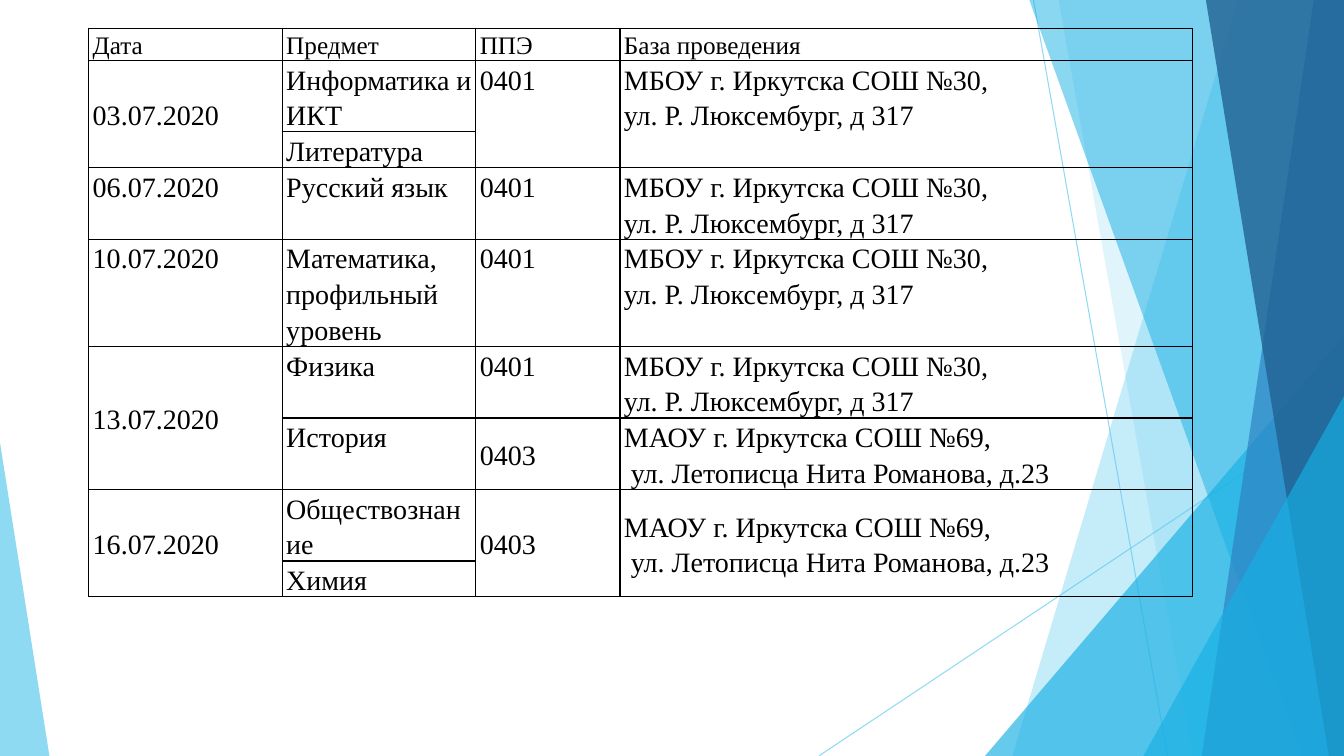
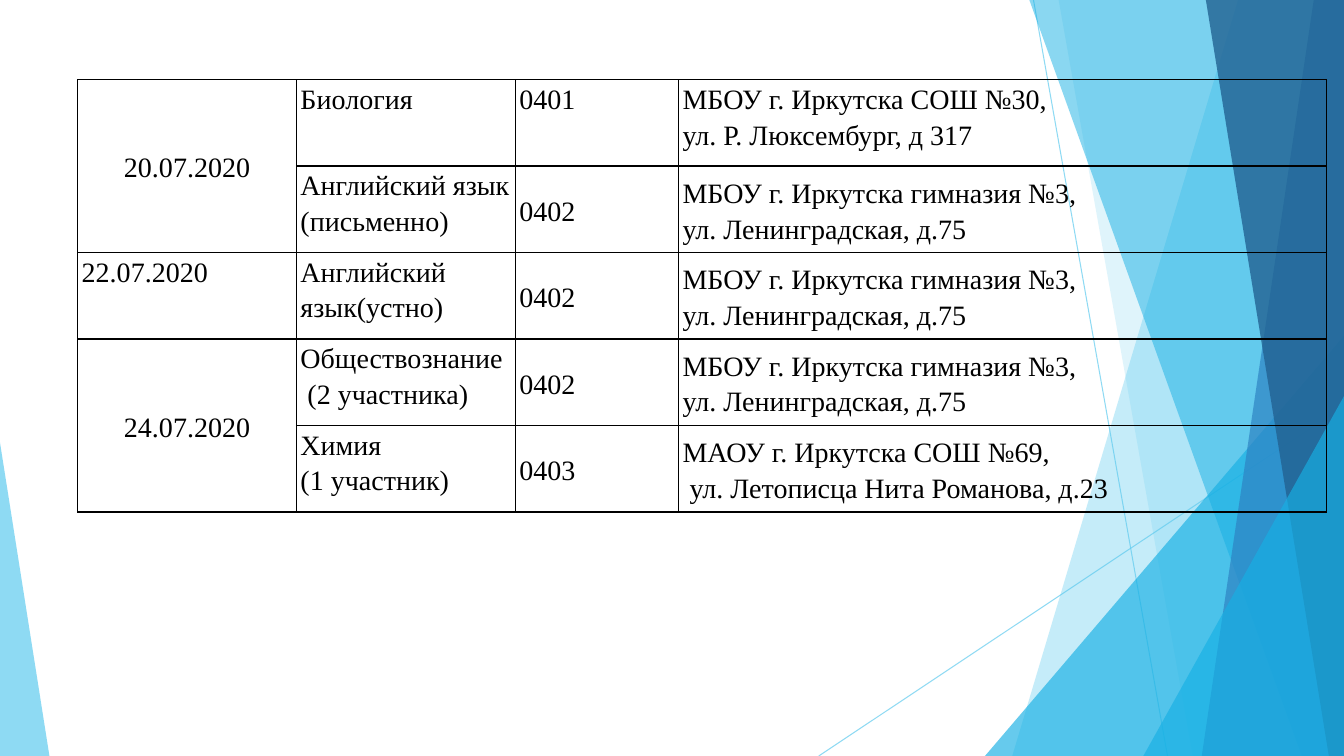
from dataclasses import dataclass
from lxml.etree import SubElement
from pptx import Presentation
from pptx.dml.color import RGBColor as Rgb
from pptx.dml.fill import FillFormat as Fill
from pptx.enum.shapes import MSO_CONNECTOR as Link, MSO_SHAPE as Kind
from pptx.enum.text import MSO_ANCHOR as Anchor, PP_ALIGN as Align
from pptx.oxml.ns import qn
from pptx.slide import Slide
from pptx.table import _Cell as Cell
from pptx.util import Inches, Pt

WIDE, HIGH = Inches(13.33), Inches(7.5)
FONT, INK = "Times New Roman", "000000"
SKY, AZURE, BLUE, NAVY = "5FCBEF", "17B0E4", "2E83C3", "226292"
LINE = 4.73


@dataclass
class Ray:
    x1: float
    y1: float
    x2: float
    y2: float


@dataclass
class Band:
    top: float
    foot: float
    hue: str
    alpha: int


@dataclass
class Peak:
    left: float
    right: float
    top: float
    tip: float
    hue: str
    alpha: int


@dataclass
class Site:
    code: str
    base: str
    mid: bool = True


@dataclass
class Exam:
    name: str
    day: str = ""
    site: Site | None = None
    days: int = 1
    sites: int = 1


@dataclass
class Plan:
    left: float
    top: float
    cols: list[float]
    rows: list[float]
    exams: list[Exam]
    head: list[str]
    align: Align


RAYS = [Ray(76.9, 0, 86.87, 100), Ray(100, 53.73, 60.92, 100)]
DECOR = [
    Band(92.12, 75.32, SKY, 36),
    Band(78.77, 88.75, SKY, 20),
    Peak(73.29, 100, 44.4, 1, AZURE, 66),
    Band(76.59, 96.85, AZURE, 50),
    Band(97.75, 89.42, BLUE, 70),
    Band(89.72, 98.87, NAVY, 80),
    Peak(85.07, 100, 52.4, 1, AZURE, 66),
    Peak(0, 3.68, 58.53, 0, SKY, 70),
]

S30 = Site("0401", "МБОУ г. Иркутска СОШ №30,\nул. Р. Люксембург, д 317", False)
G3 = Site("0402", "МБОУ г. Иркутска гимназия №3,\nул. Ленинградская, д.75")
S69 = Site("0403", "МАОУ г. Иркутска СОШ №69,\n ул. Летописца Нита Романова, д.23")

PLANS = [
    Plan(6.6, 3.73, [14.4, 14.4, 10.73, 42.6],
         [LINE * n for n in (0.9, 2, 1, 2, 3, 2, 2, 2, 1)],
         [Exam("Информатика и ИКТ", "03.07.2020", S30, 2, 2),
          Exam("Литература"),
          Exam("Русский язык", "06.07.2020", S30),
          Exam("Математика, профильный уровень", "10.07.2020", S30),
          Exam("Физика", "13.07.2020", S30, 2),
          Exam("История", site=S69),
          Exam("Обществознание", "16.07.2020", S69, 2, 2),
          Exam("Химия")],
         ["Дата", "Предмет", "ППЭ", "База проведения"], Align.LEFT),
    Plan(5.78, 10.53, [16.28, 16.28, 12.15, 48.24], [11.44] * 5,
         [Exam("Биология", "20.07.2020", S30, 2),
          Exam("Английский язык (письменно)", site=G3),
          Exam("Английский язык(устно)", "22.07.2020", G3),
          Exam("Обществознание\n (2 участника)", "24.07.2020", G3, 2),
          Exam("Химия\n(1 участник)", site=S69)],
         [], Align.CENTER),
]


def px(share: float) -> int:
    return round(WIDE * share / 100)


def py(share: float) -> int:
    return round(HIGH * share / 100)


def paint(fill: Fill, hue: str) -> None:
    fill.solid()
    fill.fore_color.rgb = Rgb.from_string(hue)


def fade(shape, alpha: int) -> None:
    for tint in shape._element.spPr.iter(qn("a:srgbClr")):
        SubElement(tint, qn("a:alpha")).set("val", str(alpha * 1000))


def draw_ray(slide: Slide, ray: Ray) -> None:
    line = slide.shapes.add_connector(
        Link.STRAIGHT, px(ray.x1), py(ray.y1), px(ray.x2), py(ray.y2))
    line.line.width = Pt(0.75)
    paint(line.line.fill, SKY)
    fade(line, 70)
    SubElement(line._element.spPr, qn("a:effectLst"))


def draw_part(slide: Slide, part: Band | Peak) -> None:
    if isinstance(part, Band):
        pen = slide.shapes.build_freeform(px(part.top), 0)
        pen.add_line_segments([(WIDE, 0), (WIDE, HIGH), (px(part.foot), HIGH)])
        shape = pen.convert_to_shape()
    else:
        shape = slide.shapes.add_shape(
            Kind.ISOSCELES_TRIANGLE, px(part.left), py(part.top),
            px(part.right - part.left), py(100 - part.top))
        shape.adjustments[0] = part.tip
    shape.shadow.inherit = False
    shape.line.fill.background()
    paint(shape.fill, part.hue)
    fade(shape, part.alpha)


def frame(cell: Cell) -> None:
    props = cell._tc.get_or_add_tcPr()
    for side in "LRTB":
        edge = SubElement(props, qn(f"a:ln{side}"), w=str(Pt(1)))
        tint = SubElement(edge, qn("a:solidFill"))
        SubElement(tint, qn("a:srgbClr"), val=INK)
    cell.fill.background()


def write(cell: Cell, text: str, mid: bool = False, size: int = 20,
          align: Align = Align.LEFT) -> None:
    cell.text = text
    cell.margin_left = cell.margin_right = Inches(0.04)
    cell.margin_top = cell.margin_bottom = 0
    cell.vertical_anchor = Anchor.MIDDLE if mid else Anchor.TOP
    for para in cell.text_frame.paragraphs:
        para.alignment = align
        para.line_spacing = 1.15
        para.font.name = FONT
        para.font.size = Pt(size)
        para.font.color.rgb = Rgb.from_string(INK)


def draw_plan(slide: Slide, plan: Plan) -> None:
    table = slide.shapes.add_table(
        len(plan.rows), len(plan.cols), px(plan.left), py(plan.top),
        px(sum(plan.cols)), py(sum(plan.rows))).table
    table.first_row = table.horz_banding = False
    for col, wide in zip(table.columns, plan.cols):
        col.width = px(wide)
    for row, high in zip(table.rows, plan.rows):
        row.height = py(high)
    for cell in table.iter_cells():
        frame(cell)
        write(cell, "")
    for col, text in enumerate(plan.head):
        write(table.cell(0, col), text, size=18)

    def put(row: int, col: int, span: int, text: str, mid: bool,
            align: Align = Align.LEFT) -> None:
        cell = table.cell(row, col)
        if span > 1:
            cell.merge(table.cell(row + span - 1, col))
        write(cell, text, mid, align=align)

    for row, exam in enumerate(plan.exams, 1 if plan.head else 0):
        put(row, 1, 1, exam.name, False)
        if exam.day:
            long = exam.days > 1
            put(row, 0, exam.days, exam.day, long,
                plan.align if long else Align.LEFT)
        if exam.site:
            put(row, 2, exam.sites, exam.site.code, exam.site.mid)
            put(row, 3, exam.sites, exam.site.base, exam.site.mid)


def main() -> None:
    deck = Presentation()
    deck.slide_width, deck.slide_height = WIDE, HIGH
    for plan in PLANS:
        slide = deck.slides.add_slide(deck.slide_layouts[6])
        for ray in RAYS:
            draw_ray(slide, ray)
        for part in DECOR:
            draw_part(slide, part)
        draw_plan(slide, plan)
    deck.save("out.pptx")


if __name__ == "__main__":
    main()
